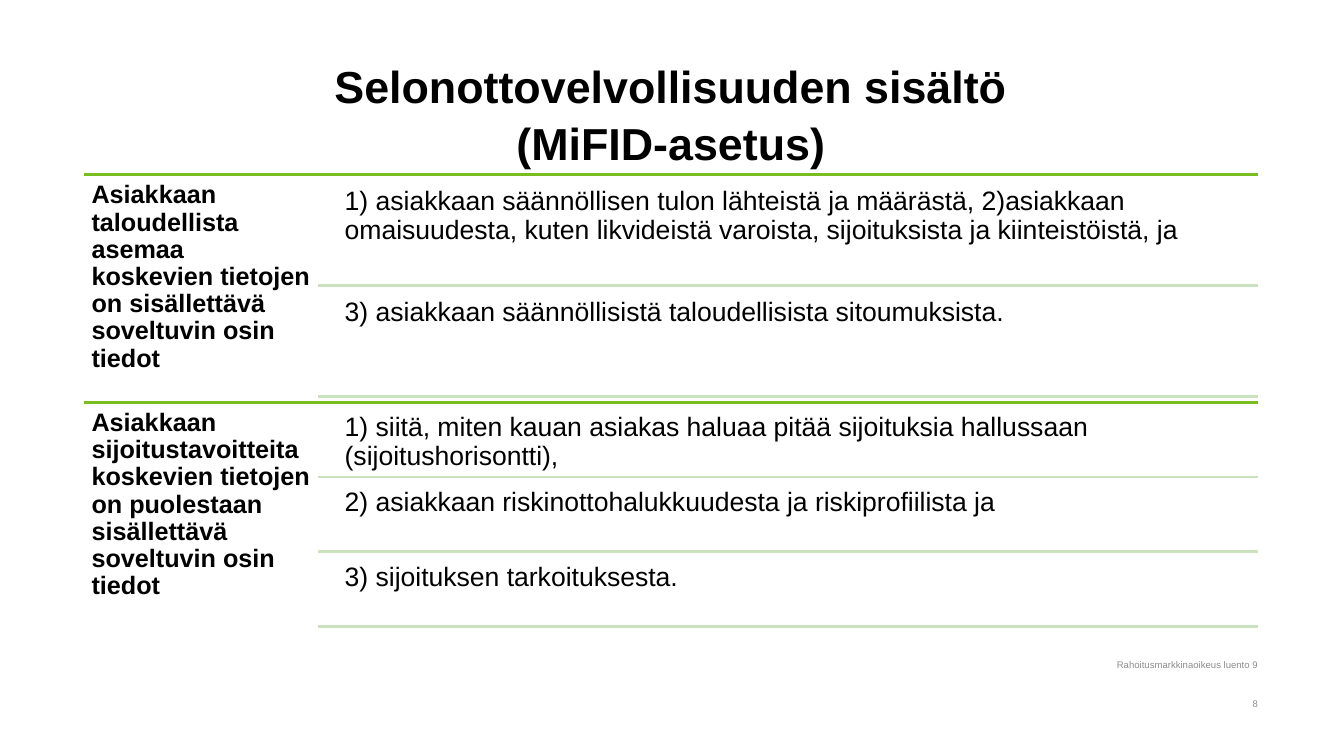
"""Build the slide on the content of the duty to obtain client information."""
from lxml import etree
from pptx import Presentation
from pptx.dml.color import RGBColor
from pptx.enum import shapes, text
from pptx.oxml import ns
from pptx.util import Pt

COLORS = {"text": "000000", "section": "78BE20", "item": "CAE2BD", "footer": "8C8C8C"}
LEFT, RIGHT = 60, 898.5
RULE_LEFT, ITEM_LEFT = 227.5, 240.5
SECTION_TOP, SECTION_HEIGHT = 124.6, 162.7
GAP = 0.05

SECTIONS = [
    ("Asiakkaan taloudellista asemaa koskevien tietojen on sisällettävä soveltuvin osin tiedot",
     ["1) asiakkaan säännöllisen tulon lähteistä ja määrästä, 2)asiakkaan omaisuudesta, "
      "kuten likvideistä varoista, sijoituksista ja kiinteistöistä, ja",
      "3) asiakkaan säännöllisistä taloudellisista sitoumuksista."]),
    ("Asiakkaan sijoitustavoitteita koskevien tietojen on puolestaan sisällettävä soveltuvin osin tiedot",
     ["1) siitä, miten kauan asiakas haluaa pitää sijoituksia hallussaan (sijoitushorisontti),",
      "2) asiakkaan riskinottohalukkuudesta ja riskiprofiilista ja",
      "3) sijoituksen tarkoituksesta."]),
]

prs = Presentation()
prs.slide_width, prs.slide_height = Pt(960), Pt(540)
slide = prs.slides.add_slide(prs.slide_layouts[5])


def write(box, place, words, size, insets, color="text", bold=False,
          align=text.PP_ALIGN.LEFT, anchor=text.MSO_ANCHOR.TOP, spacing=0.9):
    box.left, box.top, box.width, box.height = map(Pt, place)
    frame = box.text_frame
    frame.word_wrap = True
    frame.auto_size = text.MSO_AUTO_SIZE.NONE
    frame.vertical_anchor = anchor
    (frame.margin_left, frame.margin_top,
     frame.margin_right, frame.margin_bottom) = map(Pt, insets)
    frame.text = words
    paragraph = frame.paragraphs[0]
    paragraph.alignment = align
    paragraph.line_spacing = spacing
    paragraph.font.name = "Arial"
    paragraph.font.size = Pt(size)
    paragraph.font.bold = bold
    paragraph.font.color.rgb = RGBColor.from_string(COLORS[color])


def rule(left, y, color):
    line = slide.shapes.add_connector(
        shapes.MSO_CONNECTOR.STRAIGHT, Pt(left), Pt(y), Pt(RIGHT), Pt(y))
    line.line.color.rgb = RGBColor.from_string(COLORS[color])
    line.line.width = Pt(2)
    etree.SubElement(line._element.spPr, ns.qn("a:effectLst"))


write(slide.shapes.title, (LEFT, 38, 838.5, 85), "Selonottovelvollisuuden sisältö\v(MiFID-asetus)",
      32, (7.2, 3.6, 7.2, 3.6), bold=True, align=text.PP_ALIGN.CENTER,
      anchor=text.MSO_ANCHOR.MIDDLE, spacing=1.05)

for index, (heading, items) in enumerate(SECTIONS):
    top = SECTION_TOP + index * SECTION_HEIGHT
    rule(LEFT, top, "section")
    write(slide.shapes.add_textbox(0, 0, 0, 0), (LEFT, top, 167.7, SECTION_HEIGHT),
          heading, 18, (5.4,) * 4, bold=True)
    item_height = SECTION_HEIGHT / (len(items) + GAP * (len(items) + 1))
    for row, item in enumerate(items):
        item_top = top + item_height * (GAP + row * (1 + GAP))
        write(slide.shapes.add_textbox(0, 0, 0, 0),
              (ITEM_LEFT, item_top, RIGHT - ITEM_LEFT, item_height), item, 19, (5.7,) * 4)
        rule(RULE_LEFT, item_top + item_height, "item")

for words, top in (("Rahoitusmarkkinaoikeus luento 9", 468.7), ("8", 496.1)):
    write(slide.shapes.add_textbox(0, 0, 0, 0), (518.4, top, 380.1, 12.6), words, 6.8,
          (7.2, 3.6, 0, 3.6), color="footer", align=text.PP_ALIGN.RIGHT,
          anchor=text.MSO_ANCHOR.MIDDLE, spacing=1.0)

prs.save("out.pptx")
